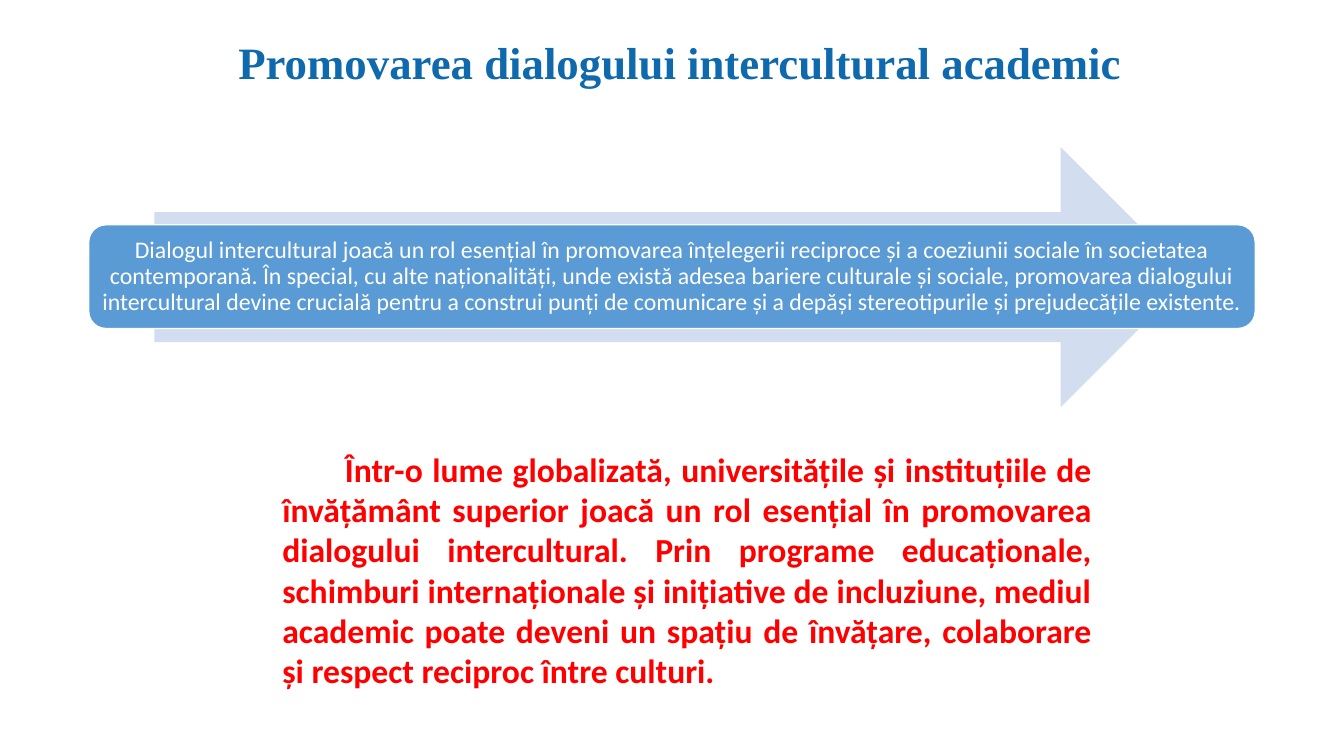
from dataclasses import dataclass

import pptx
import pptx.dml.color
import pptx.enum.shapes
import pptx.enum.text
import pptx.util
from lxml import etree
from pptx.dml.color import RGBColor
from pptx.enum.shapes import MSO_SHAPE
from pptx.enum.text import MSO_ANCHOR, MSO_AUTO_SIZE, PP_ALIGN
from pptx.util import Inches

TITLE_BLUE = RGBColor(0x0E, 0x69, 0xAD)
ARROW_BLUE = RGBColor(0xD2, 0xDE, 0xEF)
BANNER_BLUE = RGBColor(0x5B, 0x9B, 0xD5)
WHITE = RGBColor(0xFF, 0xFF, 0xFF)
RED = RGBColor(0xFF, 0x00, 0x00)

TITLE = "Promovarea dialogului intercultural academic"
BANNER = (
    "Dialogul intercultural joacă un rol esențial în promovarea înțelegerii "
    "reciproce și a coeziunii sociale în societatea contemporană. În special, "
    "cu alte naționalități, unde există adesea bariere culturale și sociale, "
    "promovarea dialogului intercultural devine crucială pentru a construi "
    "punți de comunicare și a depăși stereotipurile și prejudecățile existente."
)
BODY = (
    "Într-o lume globalizată, universitățile și instituțiile de învățământ "
    "superior joacă un rol esențial în promovarea dialogului intercultural. "
    "Prin programe educaționale, schimburi internaționale și inițiative de "
    "incluziune, mediul academic poate deveni un spațiu de învățare, "
    "colaborare și respect reciproc între culturi."
)


@dataclass
class Box:
    left: float
    top: float
    width: float
    height: float


@dataclass
class TextStyle:
    font: str
    size: int
    color: RGBColor
    bold: bool
    align: PP_ALIGN
    anchor: MSO_ANCHOR
    spacing: float = 1.0
    inset_x: float = 0.1
    inset_y: float = 0.05


def place(sp, box: Box) -> None:
    sp.left, sp.top = Inches(box.left), Inches(box.top)
    sp.width, sp.height = Inches(box.width), Inches(box.height)


def write(sp, text: str, style: TextStyle):
    tf = sp.text_frame
    tf.word_wrap = True
    tf.auto_size = MSO_AUTO_SIZE.NONE
    tf.vertical_anchor = style.anchor
    tf.margin_left = tf.margin_right = Inches(style.inset_x)
    tf.margin_top = tf.margin_bottom = Inches(style.inset_y)
    p = tf.paragraphs[0]
    p.text = text
    p.alignment = style.align
    p.line_spacing = style.spacing
    p.space_before = p.space_after = pptx.util.Pt(0)
    p.font.name = style.font
    p.font.size = pptx.util.Pt(style.size)
    p.font.bold = style.bold
    p.font.color.rgb = style.color
    return p


def add_block(s, kind: MSO_SHAPE, box: Box, fill: RGBColor):
    sp = s.shapes.add_shape(kind, 0, 0, 0, 0)
    place(sp, box)
    sp.shadow.inherit = False
    sp.fill.solid()
    sp.fill.fore_color.rgb = fill
    sp.line.fill.background()
    return sp


def indent_first_line(p, indent: float) -> None:
    """Drop the bullet and indent only the first line."""
    pPr = p._p.get_or_add_pPr()
    pPr.set("marL", "0")
    pPr.set("indent", str(Inches(indent)))
    bullet = etree.Element(pptx.oxml.ns.qn("a:buNone"))
    pPr.insert_element_before(bullet, "a:tabLst", "a:defRPr", "a:extLst")


def main() -> None:
    prs = pptx.Presentation()
    prs.slide_width, prs.slide_height = Inches(13.33), Inches(7.5)
    s = prs.slides.add_slide(prs.slide_layouts[1])

    # Title
    title = s.shapes.title
    place(title, Box(1.62, 0.16, 10.25, 0.9))
    write(title, TITLE, TextStyle("Times New Roman", 32, TITLE_BLUE, True,
                                  PP_ALIGN.CENTER, MSO_ANCHOR.MIDDLE))

    # Arrow with the banner across it
    add_block(s, MSO_SHAPE.RIGHT_ARROW, Box(1.53, 1.46, 10.28, 2.58), ARROW_BLUE)
    banner = add_block(s, MSO_SHAPE.ROUNDED_RECTANGLE,
                       Box(0.88, 2.23, 11.57, 1.03), BANNER_BLUE)
    banner.line.color.rgb = WHITE
    banner.line.width = pptx.util.Pt(1)
    write(banner, BANNER, TextStyle("Calibri", 17, WHITE, False,
                                    PP_ALIGN.CENTER, MSO_ANCHOR.MIDDLE,
                                    spacing=0.9, inset_x=0.06, inset_y=0.06))

    # Closing paragraph
    body = s.placeholders[1]
    place(body, Box(2.7, 4.4, 8.23, 2.63))
    p = write(body, BODY, TextStyle("Calibri", 24, RED, True,
                                    PP_ALIGN.JUSTIFY, MSO_ANCHOR.TOP))
    indent_first_line(p, 0.62)

    prs.save("out.pptx")


if __name__ == "__main__":
    main()
